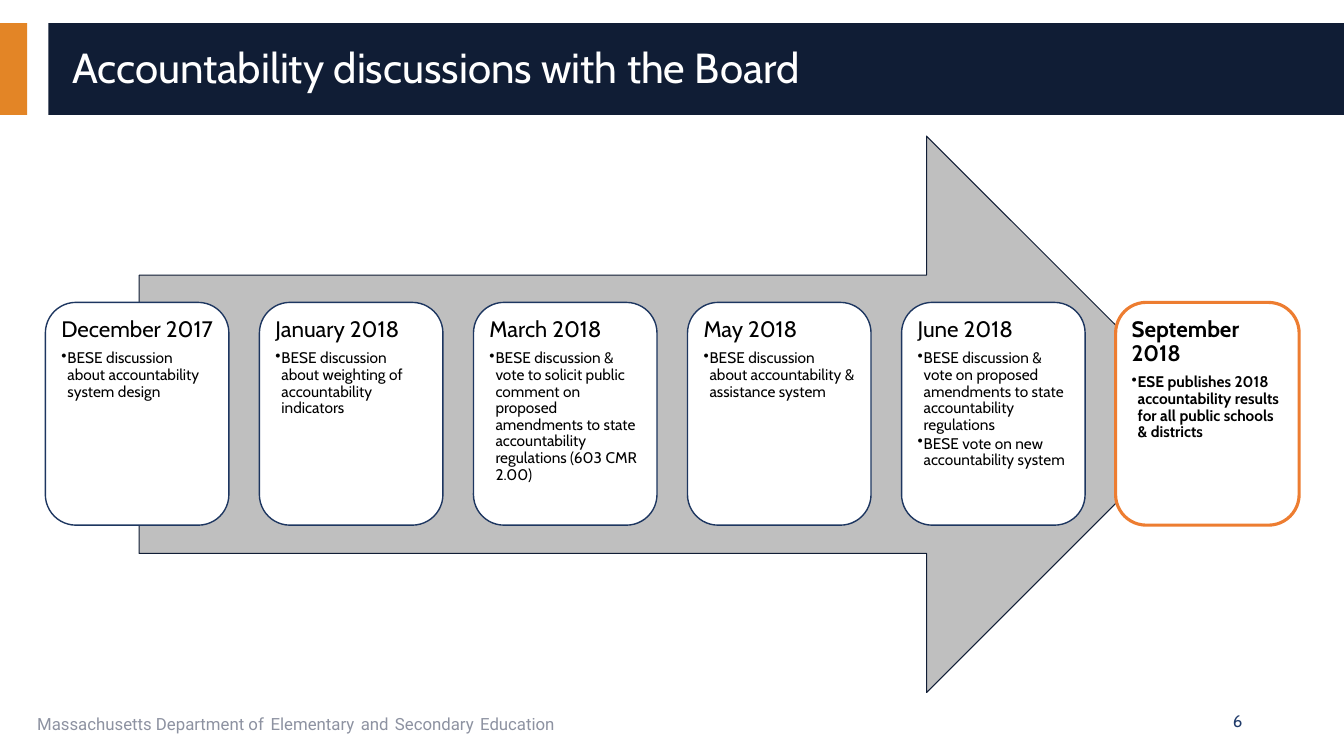
from lxml import etree
from pptx import Presentation
from pptx.dml.color import RGBColor
from pptx.enum import shapes, text
from pptx.oxml import ns
from pptx.util import Inches, Pt

NAVY = RGBColor(0x10, 0x1D, 0x35)
BLUE = RGBColor(0x1D, 0x36, 0x60)
INK = RGBColor(0x20, 0x3B, 0x6A)
AMBER = RGBColor(0xE3, 0x85, 0x26)
ORANGE = RGBColor(0xED, 0x7D, 0x31)
GRAY = RGBColor(0xBF, 0xBF, 0xBF)
SLATE = RGBColor(0x8D, 0x92, 0xA1)
WHITE = RGBColor(0xFF, 0xFF, 0xFF)
BLACK = RGBColor(0, 0, 0)

KIND = shapes.MSO_SHAPE
ALIGN = text.PP_ALIGN
ANCHOR = text.MSO_ANCHOR

STAGES = [
    ("December 2017", ["BESE discussion about accountability system design"]),
    ("January 2018",
     ["BESE discussion about weighting of accountability indicators"]),
    ("March 2018",
     ["BESE discussion & vote to solicit public comment on proposed "
      "amendments to state accountability regulations (603 CMR 2.00)"]),
    ("May 2018",
     ["BESE discussion about accountability & assistance system"]),
    ("June 2018",
     ["BESE discussion & vote on proposed amendments to state "
      "accountability regulations",
      "BESE vote on new accountability system"]),
    ("September 2018",
     ["ESE publishes 2018 accountability results for all public schools "
      "& districts"]),
]


def write(par, words, size=11, color=BLACK, face="Cabin", bold=False):
    run = par.add_run()
    run.text = words
    font = run.font
    font.size = Pt(size)
    font.name = face
    font.bold = bold
    font.color.rgb = color


def shape(slide, kind, box, fill, line=None, width=1):
    item = slide.shapes.add_shape(kind, *map(Inches, box))
    item.shadow.inherit = False
    item.fill.solid()
    item.fill.fore_color.rgb = fill
    if line is None:
        item.line.fill.background()
    else:
        item.line.color.rgb = line
        item.line.width = Pt(width)
    return item


def label(slide, box, anchor=ANCHOR.TOP, align=ALIGN.LEFT):
    frame = slide.shapes.add_textbox(*map(Inches, box)).text_frame
    frame.word_wrap = True
    frame.vertical_anchor = anchor
    par = frame.paragraphs[0]
    par.alignment = align
    return par


def bullet(par):
    par.level = 1
    props = par._p.get_or_add_pPr()
    props.set("marL", str(Inches(0.06)))
    props.set("indent", str(Inches(-0.06)))
    etree.SubElement(props, ns.qn("a:buChar")).set("char", "•")


def card(slide, left, date, notes, last):
    box = (left, 3, 1.82, 2.21)
    line, width = (ORANGE, 2.25) if last else (BLUE, 1)
    frame = shape(slide, KIND.ROUNDED_RECTANGLE, box, WHITE, line,
                  width).text_frame
    frame.word_wrap = True
    frame.vertical_anchor = ANCHOR.TOP
    frame.margin_left = frame.margin_right = Inches(0.07)
    frame.margin_top = frame.margin_bottom = Inches(0.07)
    for row, words in enumerate([date, *notes]):
        par = frame.add_paragraph() if row else frame.paragraphs[0]
        if row:
            bullet(par)
        par.alignment = ALIGN.LEFT
        par.line_spacing = 0.9
        par.space_after = Pt(1.65 if row else 5.6)
        write(par, words, size=11 if row else 16, bold=last)


def footer(slide):
    par = label(slide, (0.27, 6.95, 8.44, 0.4))
    parts = ["Massachusetts Department of", "Elementary", "and",
             "Secondary", "Education"]
    for spot, words in enumerate(parts):
        if spot:
            write(par, " ", size=18, color=INK, face="Roboto")
        write(par, words, size=12, color=SLATE, face="Roboto")
    par = label(slide, (9.42, 6.95, 3, 0.4), ANCHOR.MIDDLE, ALIGN.RIGHT)
    write(par, "6", size=12, color=INK)


def main():
    deck = Presentation()
    deck.slide_width = Inches(13.33)
    deck.slide_height = Inches(7.5)
    slide = deck.slides.add_slide(deck.slide_layouts[6])

    shape(slide, KIND.RECTANGLE, (0, 0.23, 0.27, 0.91), AMBER)
    shape(slide, KIND.RECTANGLE, (0.48, 0.23, 12.85, 0.91), NAVY)
    title = label(slide, (0.62, 0.32, 12.44, 0.74), ANCHOR.MIDDLE)
    title.line_spacing = 0.9
    write(title, "Accountability discussions with the Board", size=30,
          color=WHITE)

    shape(slide, KIND.RIGHT_ARROW, (1.38, 1.35, 10.57, 5.52), GRAY, NAVY, 0.75)
    for spot, (date, notes) in enumerate(STAGES):
        last = spot == len(STAGES) - 1
        card(slide, 0.45 + 2.123 * spot, date, notes, last)
    footer(slide)
    deck.save("out.pptx")


if __name__ == "__main__":
    main()
